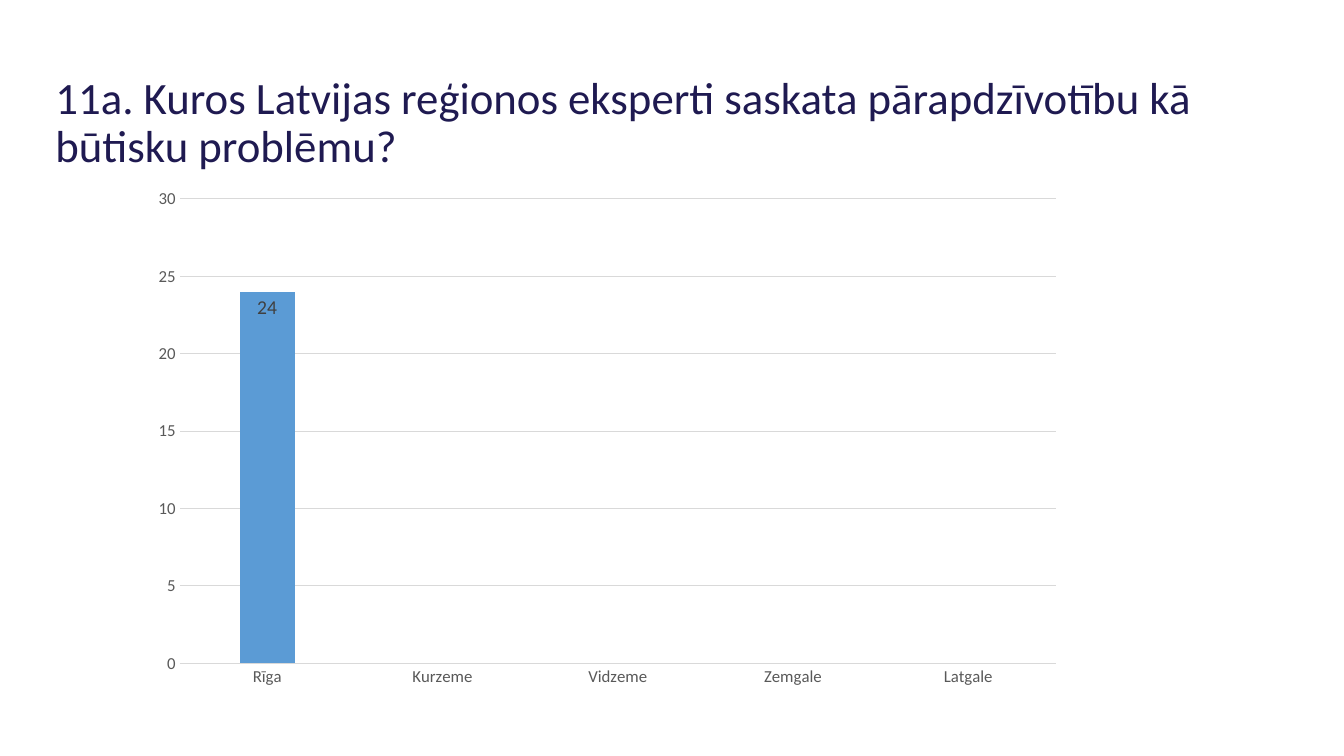
from dataclasses import dataclass

from pptx import Presentation
from pptx.chart.data import CategoryChartData
from pptx.dml.color import RGBColor
from pptx.enum.chart import XL_CHART_TYPE as ChartType
from pptx.enum.chart import XL_LABEL_POSITION as LabelPosition
from pptx.enum.chart import XL_TICK_MARK as TickMark
from pptx.enum.text import MSO_ANCHOR as Anchor
from pptx.enum.text import MSO_AUTO_SIZE as AutoSize
from pptx.enum.text import PP_ALIGN as Align
from pptx.util import Pt

TITLE = "11a. Kuros Latvijas reģionos eksperti saskata pārapdzīvotību kā būtisku problēmu?"
EXPERTS_BY_REGION = {
    "Rīga": 24,
    "Kurzeme": None,
    "Vidzeme": None,
    "Zemgale": None,
    "Latgale": None,
}


@dataclass(frozen=True)
class Theme:
    font: str = "Calibri"
    title_color: str = "1F1A51"
    bar_color: str = "5B9BD5"
    label_color: str = "404040"
    axis_color: str = "595959"
    grid_color: str = "D9D9D9"
    title_size: float = 32
    label_size: float = 14
    axis_size: float = 12
    line_width: float = 0.75


def set_attributes(target, **values):
    for name, value in values.items():
        setattr(target, name, value)


class SlideBuilder:
    def __init__(self, slide, theme):
        self.slide = slide
        self.theme = theme

    def format_font(self, font, size, color):
        set_attributes(font, name=self.theme.font, size=Pt(size), bold=False)
        font.color.rgb = RGBColor.from_string(color)

    def format_line(self, line):
        line.color.rgb = RGBColor.from_string(self.theme.grid_color)
        line.width = Pt(self.theme.line_width)

    def add_title(self, text, left, top, width, height):
        title = self.slide.shapes.title
        set_attributes(title, left=Pt(left), top=Pt(top), width=Pt(width), height=Pt(height))
        frame = title.text_frame
        inset = Pt(7.2)
        set_attributes(
            frame, text=text, word_wrap=True, auto_size=AutoSize.NONE,
            vertical_anchor=Anchor.TOP, margin_left=inset, margin_top=inset,
            margin_right=inset, margin_bottom=inset,
        )
        paragraph = frame.paragraphs[0]
        set_attributes(paragraph, alignment=Align.LEFT, line_spacing=0.9, space_before=Pt(0))
        self.format_font(paragraph.runs[0].font, self.theme.title_size, self.theme.title_color)

    def add_column_chart(self, values, left, top, width, height):
        data = CategoryChartData()
        data.categories = list(values)
        data.add_series("Series 1", list(values.values()))
        chart = self.slide.shapes.add_chart(
            ChartType.COLUMN_CLUSTERED, Pt(left), Pt(top), Pt(width), Pt(height), data
        ).chart
        set_attributes(chart, has_legend=False, has_title=False)
        self.format_axes(chart)
        self.format_bars(chart.plots[0])

    def format_axes(self, chart):
        for axis in (chart.category_axis, chart.value_axis):
            set_attributes(axis, major_tick_mark=TickMark.NONE, minor_tick_mark=TickMark.NONE)
            self.format_font(axis.tick_labels.font, self.theme.axis_size, self.theme.axis_color)
        self.format_line(chart.category_axis.format.line)
        set_attributes(chart.value_axis, minimum_scale=0, maximum_scale=30, major_unit=5)
        chart.value_axis.format.line.fill.background()
        self.format_line(chart.value_axis.major_gridlines.format.line)

    def format_bars(self, plot):
        set_attributes(plot, gap_width=219, overlap=-27, vary_by_categories=False)
        series = plot.series[0]
        series.format.fill.solid()
        series.format.fill.fore_color.rgb = RGBColor.from_string(self.theme.bar_color)
        labels = series.data_labels
        set_attributes(labels, show_value=True, position=LabelPosition.INSIDE_END)
        self.format_font(labels.font, self.theme.label_size, self.theme.label_color)


def main():
    presentation = Presentation()
    set_attributes(presentation, slide_width=Pt(960), slide_height=Pt(540))
    title_only = presentation.slide_layouts.get_by_name("Title Only")
    builder = SlideBuilder(presentation.slides.add_slide(title_only), Theme())
    builder.add_title(TITLE, 32.4, 46.8, 894.2, 60.5)
    builder.add_column_chart(EXPERTS_BY_REGION, 100, 127.5, 667.5, 370.8)
    presentation.save("out.pptx")


if __name__ == "__main__":
    main()
